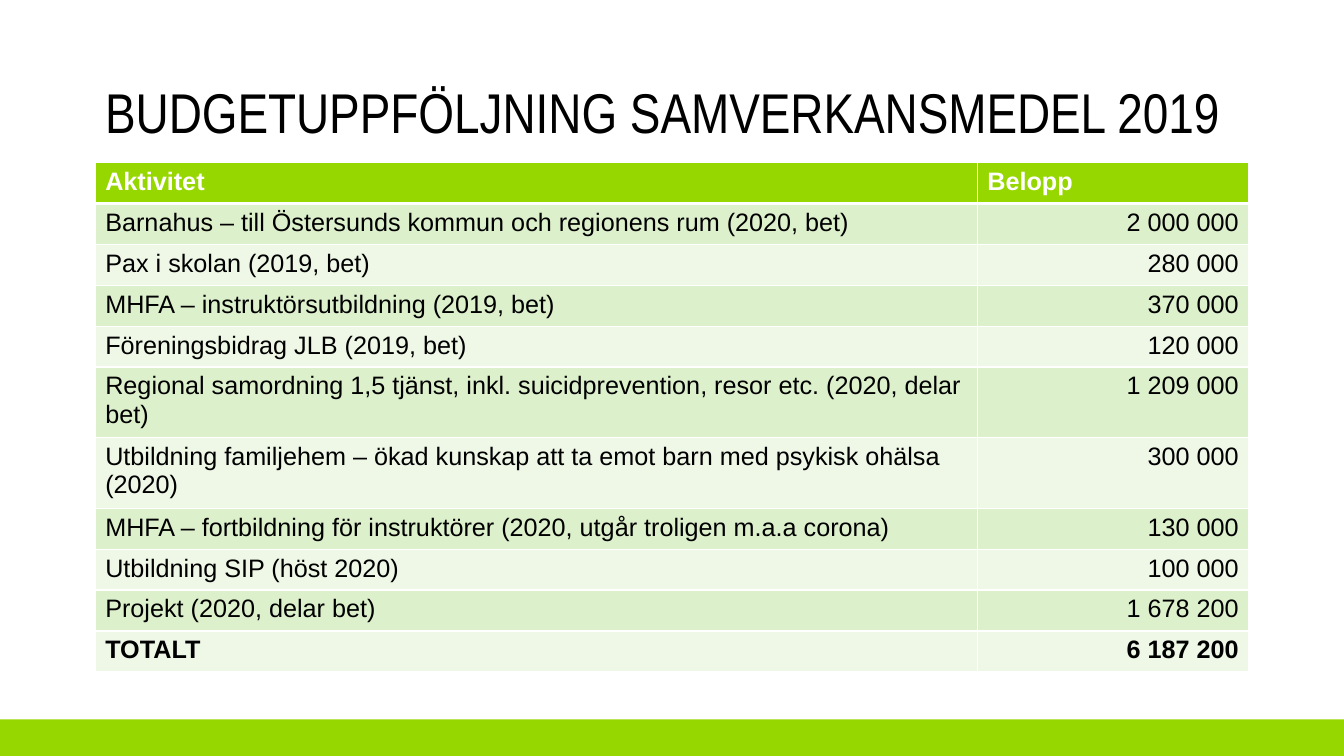
import dataclasses

import pptx
import pptx.dml.color
import pptx.enum.shapes
import pptx.enum.text
import pptx.oxml
import pptx.oxml.ns
import pptx.util

Cm = pptx.util.Cm
Pt = pptx.util.Pt
ALIGN = pptx.enum.text.PP_ALIGN


@dataclasses.dataclass(frozen=True)
class Theme:
    """Colours, fonts and type sizes of the slide."""
    accent: str = "97D700"
    bands: tuple = ("DDF0CC", "EFF8E7")
    white: str = "FFFFFF"
    black: str = "000000"
    title_font: str = "Arial Narrow"
    body_font: str = "Arial"
    title_size: int = 40
    body_size: int = 18
    thin: int = 1
    thick: int = 3


class BudgetSlide:
    """Draws the elements of one slide in a given theme."""

    def __init__(self, slide, theme):
        self.slide = slide
        self.theme = theme

    def fill(self, target, color):
        target.fill.solid()
        target.fill.fore_color.rgb = pptx.dml.color.RGBColor.from_string(color)

    def format_runs(self, paragraph, font, size, color, bold=False):
        for run in paragraph.runs:
            run.font.name = font
            run.font.size = Pt(size)
            run.font.bold = bold
            run.font.color.rgb = pptx.dml.color.RGBColor.from_string(color)

    def bar(self, left, top, width, height):
        shape = self.slide.shapes.add_shape(
            pptx.enum.shapes.MSO_SHAPE.RECTANGLE, left, top, width, height)
        shape.shadow.inherit = False
        self.fill(shape, self.theme.accent)
        shape.line.fill.background()

    def title(self, text, left, top, width, height):
        shape = self.slide.shapes.add_textbox(left, top, width, height)
        text_frame = shape.text_frame
        text_frame.word_wrap = True
        text_frame.vertical_anchor = pptx.enum.text.MSO_ANCHOR.BOTTOM
        text_frame.text = text
        paragraph = text_frame.paragraphs[0]
        paragraph.line_spacing = 0.9
        self.format_runs(paragraph, self.theme.title_font,
                         self.theme.title_size, self.theme.black)

    def borders(self, cell, widths):
        properties = cell._tc.get_or_add_tcPr()
        for side, width in widths.items():
            properties.append(pptx.oxml.parse_xml(
                f'<a:ln{side} {pptx.oxml.ns.nsdecls("a")} w="{Pt(width)}">'
                f'<a:solidFill><a:srgbClr val="{self.theme.white}"/></a:solidFill>'
                f'</a:ln{side}>'))

    def cell(self, cell, text, row, column, bold):
        theme = self.theme
        header = row == 0
        self.borders(cell, {
            "L": theme.thin, "R": theme.thin,
            "T": theme.thick if row == 1 else theme.thin,
            "B": theme.thick if header else theme.thin})
        self.fill(cell, theme.accent if header else theme.bands[(row - 1) % 2])
        cell.text_frame.text = text
        paragraph = cell.text_frame.paragraphs[0]
        if column == 1 and not header:
            paragraph.alignment = ALIGN.RIGHT
        self.format_runs(paragraph, theme.body_font, theme.body_size,
                         theme.white if header else theme.black, bold)

    def table(self, rows, left, top, column_widths, row_height):
        table = self.slide.shapes.add_table(
            len(rows), len(column_widths), left, top,
            sum(column_widths), row_height * len(rows)).table
        for column, width in zip(table.columns, column_widths):
            column.width = width
        for row, texts in enumerate(rows):
            table.rows[row].height = row_height
            bold = row in (0, len(rows) - 1)
            for column, text in enumerate(texts):
                self.cell(table.cell(row, column), text, row, column, bold)


BUDGET = [
    ("Aktivitet", "Belopp"),
    ("Barnahus – till Östersunds kommun och regionens rum (2020, bet)", "2 000 000"),
    ("Pax i skolan (2019, bet)", "280 000"),
    ("MHFA – instruktörsutbildning (2019, bet)", "370 000"),
    ("Föreningsbidrag JLB (2019, bet)", "120 000"),
    ("Regional samordning 1,5 tjänst, inkl. suicidprevention, resor etc. "
     "(2020, delar bet)", "1 209 000"),
    ("Utbildning familjehem – ökad kunskap att ta emot barn med psykisk ohälsa "
     "(2020)", "300 000"),
    ("MHFA – fortbildning för instruktörer (2020, utgår troligen m.a.a corona)",
     "130 000"),
    ("Utbildning SIP (höst 2020)", "100 000"),
    ("Projekt (2020, delar bet)", "1 678 200"),
    ("TOTALT", "6 187 200"),
]


def main():
    presentation = pptx.Presentation()
    presentation.slide_width = Cm(33.87)
    presentation.slide_height = Cm(19.05)
    slide = presentation.slides.add_slide(presentation.slide_layouts[6])
    budget = BudgetSlide(slide, Theme())
    budget.bar(Cm(0), Cm(18.13), presentation.slide_width, Cm(0.92))
    budget.title("BUDGETUPPFÖLJNING SAMVERKANSMEDEL 2019",
                 Cm(2.4), Cm(2), Cm(29.06), Cm(1.8))
    budget.table(BUDGET, Cm(2.4), Cm(4.1), (Cm(22.23), Cm(6.84)), Cm(1.03))
    presentation.save("out.pptx")


if __name__ == "__main__":
    main()
